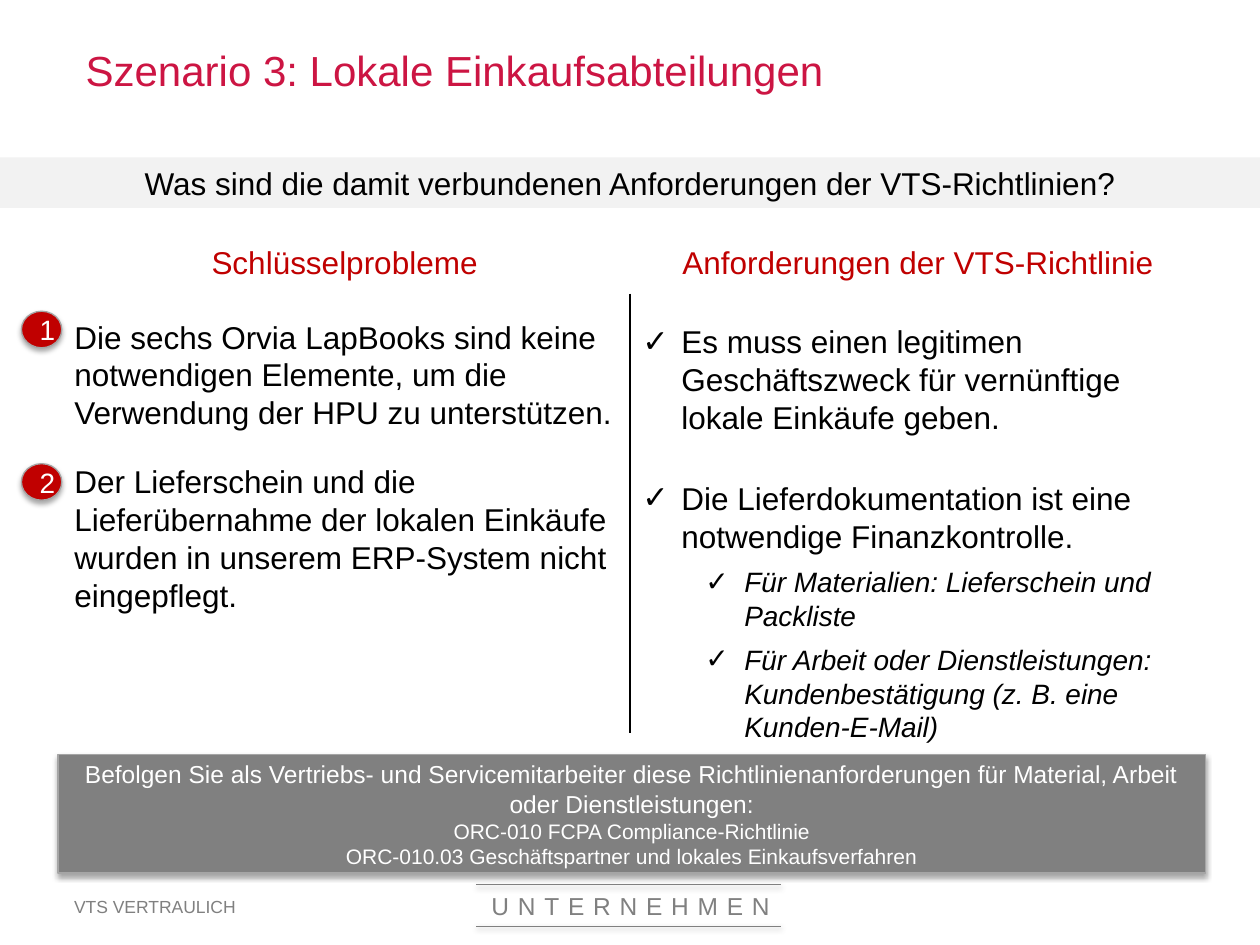
from lxml import etree
from pptx import Presentation
from pptx.dml.color import RGBColor
from pptx.enum.shapes import MSO_CONNECTOR, MSO_SHAPE
from pptx.enum.text import MSO_ANCHOR as Anchor, MSO_AUTO_SIZE, PP_ALIGN as Align
from pptx.oxml.ns import qn
from pptx.util import Inches, Pt

FONT = "Arial"
COLORS = {
    "title": "CC1543", "accent": "C00000", "text": "000000", "light": "FFFFFF",
    "band": "F2F2F2", "grey": "808080", "outline": "A5A5A5",
}


def rgb(name):
    return RGBColor.from_string(COLORS[name])


def place(shape, box):
    shape.left, shape.top, shape.width, shape.height = map(Inches, box)


def write(shape, lines, sizes, color, align=Align.LEFT, anchor=Anchor.TOP):
    """Fill a shape with one paragraph per line; return the paragraphs."""
    frame = shape.text_frame
    frame.text = "\n".join(lines)
    frame.word_wrap = True
    frame.auto_size = MSO_AUTO_SIZE.NONE
    frame.vertical_anchor = anchor
    for paragraph, size in zip(frame.paragraphs, sizes):
        paragraph.alignment = align
        for run in paragraph.runs:
            run.font.name = FONT
            run.font.size = Pt(size)
            run.font.color.rgb = rgb(color)
    return frame.paragraphs


def add_label(slide, box, text, size, color, align=Align.CENTER, anchor=Anchor.TOP):
    label = slide.shapes.add_textbox(*map(Inches, box))
    return write(label, [text], [size], color, align, anchor)[0]


def add_shadow(shape, alpha=35, distance=1.8):
    """Cast a soft black shadow straight down."""
    effects = etree.SubElement(shape._element.spPr, qn("a:effectLst"))
    shadow = etree.SubElement(
        effects, qn("a:outerShdw"), blurRad=str(Pt(3.1)), dist=str(Pt(distance)),
        dir="5400000", rotWithShape="0")
    black = etree.SubElement(shadow, qn("a:srgbClr"), val="000000")
    etree.SubElement(black, qn("a:alpha"), val=str(alpha * 1000))


def add_block(slide, kind, box, fill, outlined=True):
    block = slide.shapes.add_shape(kind, *map(Inches, box))
    block.fill.solid()
    block.fill.fore_color.rgb = rgb(fill)
    if outlined:
        block.line.color.rgb = rgb("outline")
        block.line.width = Pt(0.75)
        add_shadow(block)
    else:
        block.line.fill.background()
        block.shadow.inherit = False
    return block


def add_rule(slide, start, end, color, width, shadowed=False):
    rule = slide.shapes.add_connector(MSO_CONNECTOR.STRAIGHT, *map(Inches, start + end))
    rule.line.color.rgb = rgb(color)
    rule.line.width = Pt(width)
    if shadowed:
        add_shadow(rule, alpha=38, distance=1.6)
    else:
        etree.SubElement(rule._element.spPr, qn("a:effectLst"))


def set_bullet(paragraph, margin=0.0, hanging=0.0, char=None):
    props = paragraph._p.get_or_add_pPr()
    props.set("marL", str(Inches(margin)))
    props.set("indent", str(-Inches(hanging)))
    if char:
        etree.SubElement(props, qn("a:buFont"), typeface=FONT)
        etree.SubElement(props, qn("a:buChar"), char=char)
    else:
        etree.SubElement(props, qn("a:buNone"))


def add_title(slide, box):
    place(slide.shapes.title, box)
    write(slide.shapes.title, ["Szenario 3: Lokale Einkaufsabteilungen"], [24],
          "title", anchor=Anchor.MIDDLE)


def add_question_band(slide, box):
    band = add_block(slide, MSO_SHAPE.RECTANGLE, box, "band", outlined=False)
    write(band, ["Was sind die damit verbundenen Anforderungen der VTS-Richtlinien?"],
          [18], "text", Align.CENTER)


def add_problems(slide, box):
    left, top, width, _ = box
    add_label(slide, (left - 0.03, 1.88, width + 0.04, 0.4), "Schlüsselprobleme",
              18, "accent")
    problems = slide.placeholders[1]
    place(problems, box)
    paragraphs = write(problems, [
        "Die sechs Orvia LapBooks sind keine notwendigen Elemente, um die "
        "Verwendung der HPU zu unterstützen.",
        "Der Lieferschein und die Lieferübernahme der lokalen Einkäufe wurden in "
        "unserem ERP-System nicht eingepflegt.",
    ], [18, 18], "text")
    for number, paragraph in enumerate(paragraphs):
        set_bullet(paragraph)
        paragraph.space_before = Pt(12 if number else 0)
        paragraph.space_after = Pt(6)
        badge = add_block(slide, MSO_SHAPE.OVAL,
                          (left - 0.32, top + 1.21 * number, 0.32, 0.29), "accent")
        write(badge, [str(number + 1)], [16], "light", Align.CENTER, Anchor.MIDDLE)


def add_requirements(slide, box):
    left, _, width, _ = box
    add_label(slide, (left, 1.88, width, 0.4), "Anforderungen der VTS-Richtlinie",
              18, "accent")
    # text, level, space before, space after
    items = [
        ("Es muss einen legitimen Geschäftszweck für vernünftige lokale Einkäufe "
         "geben.", 0, 0, 0),
        ("Die Lieferdokumentation ist eine notwendige Finanzkontrolle.", 0, 24.5, 3),
        ("Für Materialien: Lieferschein und Packliste", 1, 3, 3),
        ("Für Arbeit oder Dienstleistungen: Kundenbestätigung (z. B. eine "
         "Kunden-E-Mail)", 1, 3, 3),
    ]
    requirements = slide.shapes.add_textbox(*map(Inches, box))
    paragraphs = write(requirements, [item[0] for item in items],
                       [18 - 2 * item[1] for item in items], "text")
    for paragraph, (_, level, before, after) in zip(paragraphs, items):
        set_bullet(paragraph, 0.31 + 0.5 * level, 0.31, "✓")
        paragraph.level = level
        paragraph.space_before = Pt(before)
        paragraph.space_after = Pt(after)
        paragraph.runs[0].font.italic = level == 1


def add_policy_box(slide, box):
    policies = add_block(slide, MSO_SHAPE.RECTANGLE, box, "grey")
    write(policies, [
        "Befolgen Sie als Vertriebs- und Servicemitarbeiter diese "
        "Richtlinienanforderungen für Material, Arbeit oder Dienstleistungen:",
        "ORC-010 FCPA Compliance-Richtlinie",
        "ORC-010.03 Geschäftspartner und lokales Einkaufsverfahren",
    ], [14, 12, 12], "light", Align.CENTER, Anchor.MIDDLE)


def add_footer(slide, left, top):
    add_label(slide, (left, top + 0.04, 1.63, 0.27), "VTS VERTRAULICH", 10, "grey",
              Align.LEFT, Anchor.MIDDLE)
    company = add_label(slide, (left + 3.14, top, 2.75, 0.4), "UNTERNEHMEN", 14, "grey")
    company.runs[0].font._element.set("spc", "500")
    for y in (top, top + 0.33):
        add_rule(slide, (left + 3.29, y), (left + 5.71, y), "grey", 0.5, shadowed=True)


def main():
    deck = Presentation()
    deck.slide_width, deck.slide_height = Inches(10), Inches(7.5)
    slide = deck.slides.add_slide(deck.slide_layouts[1])
    add_title(slide, (0.58, 0.08, 7.45, 0.95))
    add_question_band(slide, (0, 1.25, 10, 0.4))
    add_problems(slide, (0.49, 2.47, 4.51, 3.35))
    add_requirements(slide, (5, 2.51, 4.57, 3.79))
    add_rule(slide, (5, 2.33), (5, 5.82), "text", 1)
    add_policy_box(slide, (0.46, 5.99, 9.11, 0.94))
    add_footer(slide, 0.49, 7.02)
    deck.save("out.pptx")


if __name__ == "__main__":
    main()
